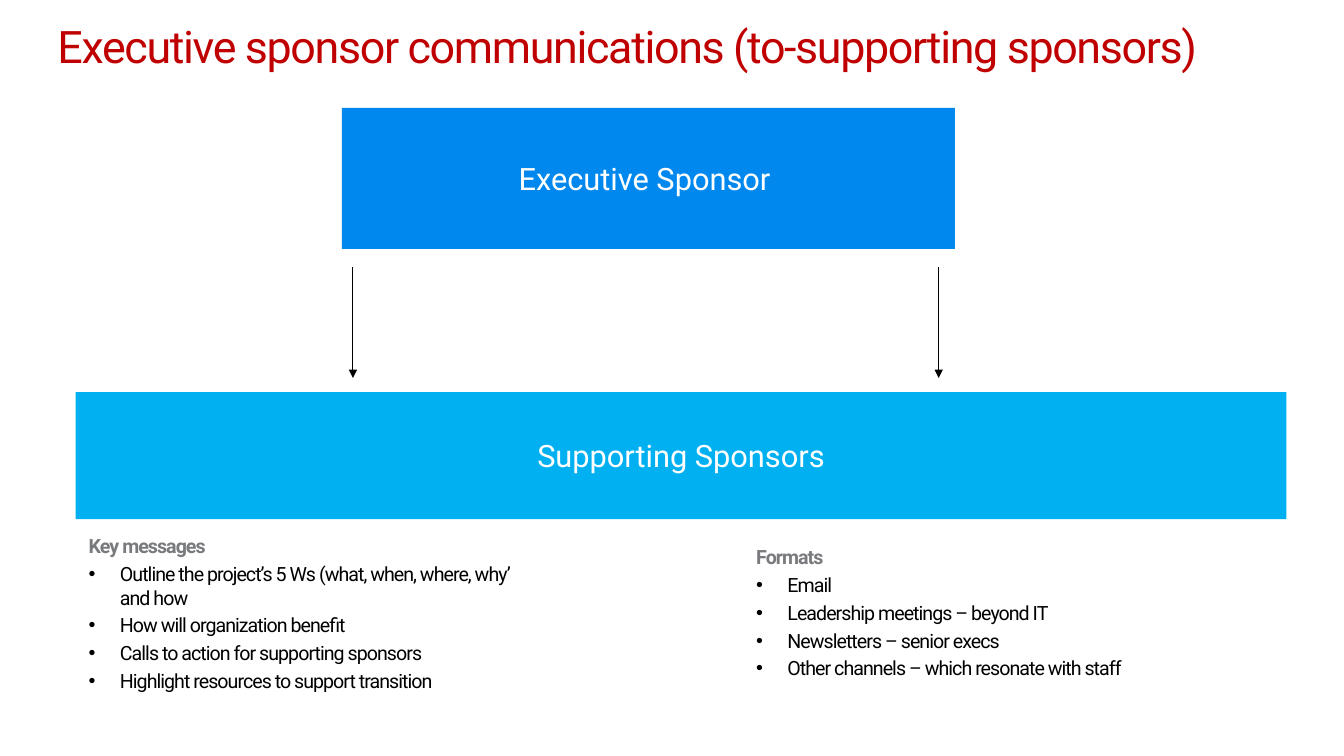
"""Build the slide on executive sponsor communications."""
from lxml import etree
from pptx import Presentation, util as u
from pptx.dml.color import RGBColor
from pptx.enum import shapes, text
from pptx.oxml.ns import qn

RED = RGBColor(0xC0, 0x00, 0x00)
BLUE = RGBColor(0x00, 0x88, 0xEE)
SKY = RGBColor(0x00, 0xB0, 0xF0)
GREY = RGBColor(0x79, 0x7A, 0x7D)
BLACK = RGBColor(0, 0, 0)
WHITE = RGBColor(255, 255, 255)

TITLE = "Executive sponsor communications (to-supporting sponsors)"
TITLE_BOX = (0.57, 0.25, 12.19, 0.82)
BARS = [
    ("Executive Sponsor ", BLUE, (3.39, 1.07, 6.08, 1.4)),
    ("Supporting Sponsors", SKY, (0.75, 3.89, 12.01, 1.26)),
]
ARROWS = [3.5, 9.31]
ARROW_TOP, ARROW_END = 2.65, 3.75
LISTS = [
    ((0.88, 5.3, 4.18, 1.71), "Key messages", [
        "Outline the project’s 5 Ws (what, when, where, why’ and how",
        "How will organization benefit",
        "Calls to action for supporting sponsors",
        "Highlight resources to support transition"]),
    ((7.5, 5.41, 5.04, 1.71), "Formats", [
        "Email",
        "Leadership meetings – beyond IT",
        "Newsletters – senior execs",
        "Other channels – which resonate with staff"]),
]
INDENT = u.Inches(0.31)


def inches(nums):
    return [u.Inches(n) for n in nums]


def put(obj, **vals):
    for name, val in vals.items():
        setattr(obj, name, val)


def frame(shape, inset, anchor):
    put(shape.text_frame, word_wrap=True, auto_size=text.MSO_AUTO_SIZE.NONE,
        vertical_anchor=anchor,
        **{"margin_" + side: u.Inches(inset)
           for side in ("left", "top", "right", "bottom")})
    return shape.text_frame


def write(para, words, size, color, bold=False, track=0):
    run = para.add_run()
    run.text = words
    put(run.font, name="Roboto", size=u.Pt(size), bold=bold)
    run.font.color.rgb = color
    if track:
        run.font._element.set("spc", str(track))


def place(shape, box):
    put(shape, **dict(zip(("left", "top", "width", "height"), inches(box))))


def add_title(slide):
    title = slide.shapes.title
    place(title, TITLE_BOX)
    para = frame(title, 0, text.MSO_ANCHOR.TOP).paragraphs[0]
    put(para, alignment=text.PP_ALIGN.LEFT, line_spacing=0.9)
    write(para, TITLE, 32, RED, track=-100)


def add_bar(slide, words, fill, box):
    bar = slide.shapes.add_shape(shapes.MSO_SHAPE.RECTANGLE, *inches(box))
    bar.shadow.inherit = False
    bar.fill.solid()
    bar.fill.fore_color.rgb = fill
    bar.line.fill.background()
    para = frame(bar, 0.05, text.MSO_ANCHOR.MIDDLE).paragraphs[0]
    para.alignment = text.PP_ALIGN.CENTER
    write(para, words, 22, WHITE)


def add_arrow(slide, x):
    arrow = slide.shapes.add_connector(
        shapes.MSO_CONNECTOR.STRAIGHT, *inches((x, ARROW_TOP, x, ARROW_END)))
    arrow.line.color.rgb = BLACK
    arrow.line.width = u.Pt(0.75)
    etree.SubElement(arrow.line._ln, qn("a:tailEnd"), type="triangle")
    etree.SubElement(arrow._element.spPr, qn("a:effectLst"))


def add_list(body, box, head, items):
    place(body, box)
    area = frame(body, 0, text.MSO_ANCHOR.TOP)
    for i, words in enumerate([head] + items):
        para = area.add_paragraph() if i else area.paragraphs[0]
        put(para, space_before=u.Pt(0), space_after=u.Pt(3), line_spacing=1.0)
        props = para._p.get_or_add_pPr()
        props.set("marL", str(INDENT if i else 0))
        props.set("indent", str(-INDENT if i else 0))
        if i:
            etree.SubElement(props, qn("a:buFont"), typeface="Arial")
            etree.SubElement(props, qn("a:buChar"), char="•")
        else:
            etree.SubElement(props, qn("a:buNone"))
        write(para, words, 14, BLACK if i else GREY, not i, -70)


def main():
    deck = Presentation()
    put(deck, slide_width=u.Inches(13.33), slide_height=u.Inches(7.5))
    slide = deck.slides.add_slide(deck.slide_layouts.get_by_name("Two Content"))
    add_title(slide)
    for bar in BARS:
        add_bar(slide, *bar)
    for x in ARROWS:
        add_arrow(slide, x)
    for idx, part in enumerate(LISTS, 1):
        add_list(slide.placeholders[idx], *part)
    deck.save("out.pptx")


if __name__ == "__main__":
    main()
